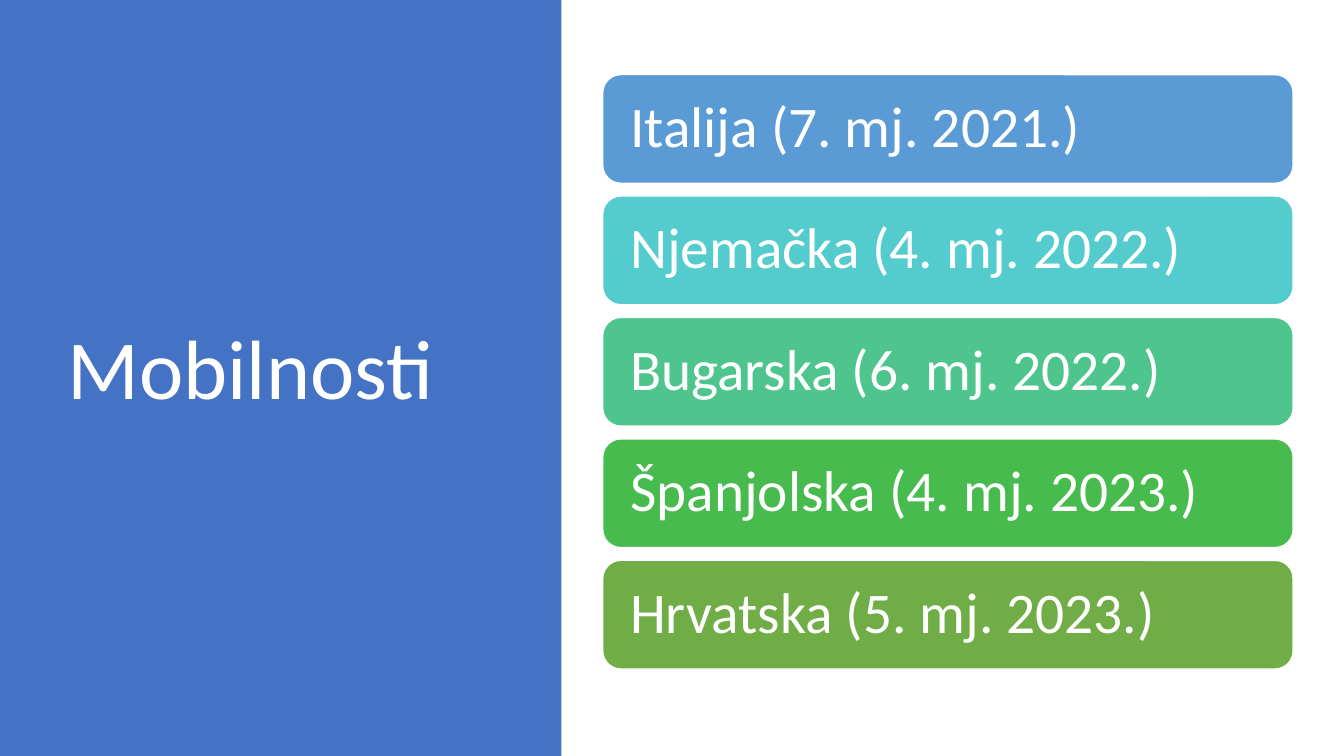
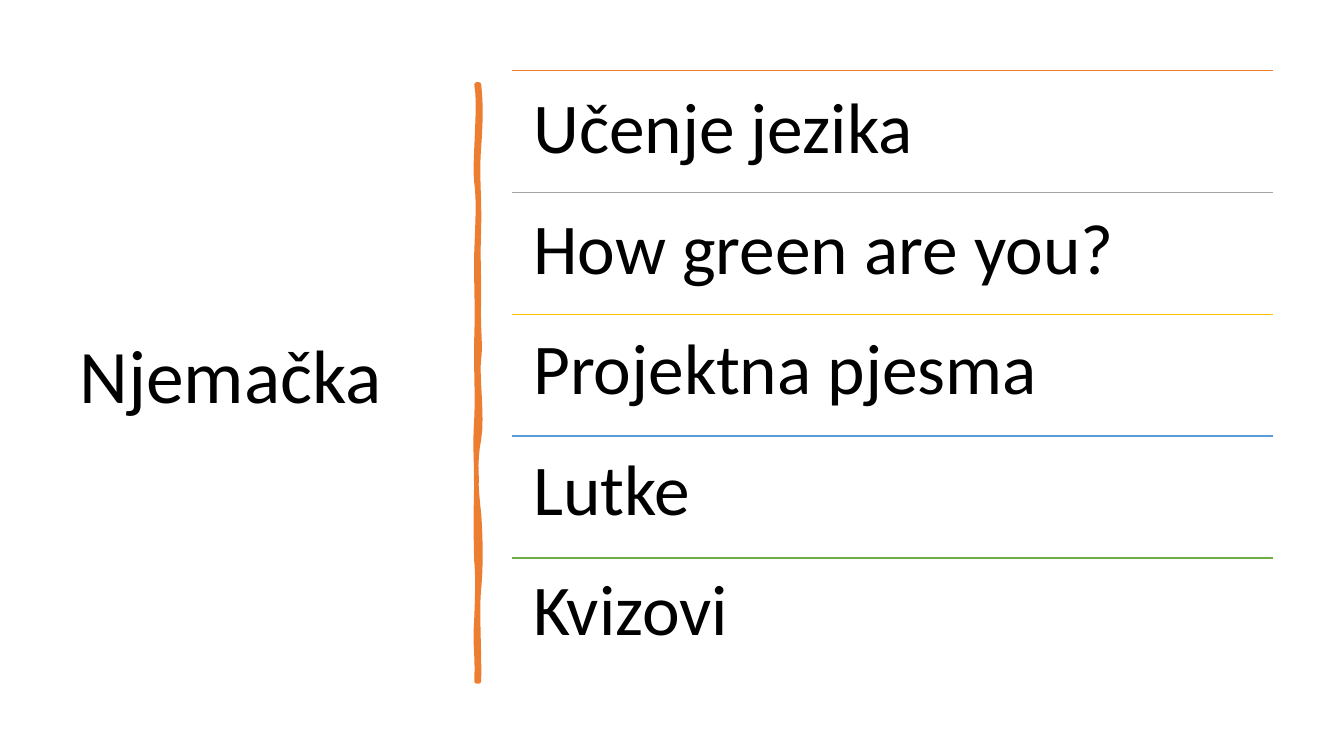
from dataclasses import dataclass

from lxml import etree
from pptx import Presentation
from pptx import util as u
from pptx.dml.color import RGBColor
from pptx.enum import shapes, text
from pptx.oxml.ns import qn

# Shared style
FONT = "Calibri"
WHITE = RGBColor(0xFF, 0xFF, 0xFF)
BLACK = RGBColor(0x00, 0x00, 0x00)
ROYAL = RGBColor(0x44, 0x72, 0xC4)
BLUE = RGBColor(0x5B, 0x9B, 0xD5)
TURQUOISE = RGBColor(0x54, 0xCC, 0xCD)
MINT = RGBColor(0x4D, 0xC5, 0x8D)
EMERALD = RGBColor(0x48, 0xBB, 0x4F)
GREEN = RGBColor(0x70, 0xAD, 0x47)
ORANGE = RGBColor(0xED, 0x7D, 0x31)
GREY = RGBColor(0xA5, 0xA5, 0xA5)
GOLD = RGBColor(0xFF, 0xC0, 0x00)


@dataclass(frozen=True)
class Item:
    label: str
    color: RGBColor


@dataclass(frozen=True)
class Box:
    """Position and size in centimetres."""
    left: float
    top: float
    width: float
    height: float

    def emu(self) -> tuple:
        return u.Cm(self.left), u.Cm(self.top), u.Cm(self.width), u.Cm(self.height)


@dataclass(frozen=True)
class Edge:
    """One side of the brush stroke; each wave is bend x, y, bend x, y, end y."""
    x: float
    start: float
    waves: tuple


MOBILITIES = (
    Item("Italija (7. mj. 2021.)", BLUE),
    Item("Njemačka (4. mj. 2022.)", TURQUOISE),
    Item("Bugarska (6. mj. 2022.)", MINT),
    Item("Španjolska (4. mj. 2023.)", EMERALD),
    Item("Hrvatska (5. mj. 2023.)", GREEN),
)
ACTIVITIES = (
    Item("Učenje jezika", ORANGE),
    Item("How green are you?", GREY),
    Item("Projektna pjesma", GOLD),
    Item("Lutke", BLUE),
    Item("Kvizovi", GREEN),
)
BAR = Box(15.19, 1.88, 17.4, 2.74)
BAR_PITCH = 3.06
ROW = Box(12.9, 1.78, 19.18, 3.07)

STROKE_EDGES = (
    Edge(12.07, 2.13, (
        (12.12, 2.59, 12.12, 3.02, 3.71),
        (12.01, 4.39, 12.09, 4.95, 5.74),
        (12.04, 6.53, 12.07, 6.65, 7.47),
        (12.04, 8.26, 12.12, 8.69, 9.04),
        (12.01, 9.4, 12.17, 10.52, 11.07),
        (11.96, 11.61, 11.99, 12.29, 12.95),
        (12.12, 13.61, 12.12, 14.33, 14.83),
        (12.01, 15.32, 12.09, 16.51, 17.17),
    )),
    Edge(12.01, 17.17, (
        (12.04, 16.41, 11.96, 16.36, 15.57),
        (12.04, 14.81, 12.04, 14.48, 14.15),
        (11.99, 13.82, 11.99, 12.57, 12.12),
        (12.01, 11.66, 11.96, 11.3, 10.54),
        (12.04, 9.8, 11.99, 9.47, 8.51),
        (12.04, 7.57, 11.99, 7.14, 6.35),
        (12.04, 5.54, 12.07, 5.08, 4.6),
        (11.94, 4.14, 12.12, 2.64, 2.13),
    )),
)


def write(tf, *lines: str, size: float, color: RGBColor, inset: float = 0.25,
          anchor=text.MSO_ANCHOR.MIDDLE, after: float = 0) -> None:
    """Fill a text frame with left-aligned paragraphs."""
    tf.word_wrap = True
    tf.auto_size = text.MSO_AUTO_SIZE.NONE
    tf.vertical_anchor = anchor
    tf.margin_left = tf.margin_right = u.Cm(inset)
    tf.margin_top = tf.margin_bottom = u.Cm(inset)
    for i, line in enumerate(lines):
        p = tf.add_paragraph() if i else tf.paragraphs[0]
        p.alignment = text.PP_ALIGN.LEFT
        p.line_spacing = 0.9
        p.space_before, p.space_after = u.Pt(0), u.Pt(after)
        r = p.add_run()
        r.text = line
        r.font.name, r.font.size = FONT, u.Pt(size)
        r.font.color.rgb = color


def place(sp, box: Box) -> None:
    sp.left, sp.top, sp.width, sp.height = box.emu()


def add_title(s, label: str, box: Box, *, size: float, color: RGBColor) -> None:
    place(s.shapes.title, box)
    write(s.shapes.title.text_frame, label, size=size, color=color)


def paint(sp, fill: RGBColor, line: RGBColor, width: float) -> None:
    sp.shadow.inherit = False
    sp.fill.solid()
    sp.fill.fore_color.rgb = fill
    sp.line.color.rgb = line
    sp.line.width = u.Pt(width)


def add_block(s, kind, box: Box, fill: RGBColor):
    sp = s.shapes.add_shape(kind, *box.emu())
    paint(sp, fill, WHITE, 1)
    return sp


def add_rule(s, left: float, top: float, width: float, color: RGBColor) -> None:
    y = u.Cm(top)
    line = s.shapes.add_connector(
        shapes.MSO_CONNECTOR.STRAIGHT, u.Cm(left), y, u.Cm(left + width), y)
    line.line.color.rgb = color
    line.line.width = u.Pt(1)
    etree.SubElement(line._element.spPr, qn("a:effectLst"))


def edge_points(edge: Edge, steps: int = 8) -> list[tuple[int, int]]:
    """Sample the cubic curves along one edge."""
    points, y0 = [(u.Cm(edge.x), u.Cm(edge.start))], edge.start
    for x1, y1, x2, y2, y3 in edge.waves:
        for i in range(1, steps + 1):
            t = i / steps
            a, b, c, d = (1 - t) ** 3, 3 * t * (1 - t) ** 2, 3 * t * t * (1 - t), t ** 3
            points.append((u.Cm((a + d) * edge.x + b * x1 + c * x2),
                           u.Cm(a * y0 + b * y1 + c * y2 + d * y3)))
        y0 = y3
    return points


def add_brush_stroke(s) -> None:
    points = [pt for edge in STROKE_EDGES for pt in edge_points(edge)]
    outline = s.shapes.build_freeform(*points[0])
    outline.add_line_segments(points[1:], close=True)
    sp = outline.convert_to_shape()
    paint(sp, ORANGE, ORANGE, 3.25)
    etree.SubElement(sp.line._get_or_add_ln(), qn("a:round"))


def add_plain_list(s, items: tuple[Item, ...], box: Box) -> None:
    """Body list without bullets, one line per ruled row."""
    body = s.placeholders[1]
    place(body, box)
    write(body.text_frame, *(item.label for item in items), size=51, color=BLACK,
          inset=0.54, anchor=text.MSO_ANCHOR.TOP, after=31)
    for p in body.text_frame.paragraphs:
        pPr = p._p.get_or_add_pPr()
        pPr.set("marL", "0")
        pPr.set("indent", "0")
        etree.SubElement(pPr, qn("a:buNone"))


def mobilities_slide(prs) -> None:
    s = prs.slides.add_slide(prs.slide_layouts[5])
    # Side panel behind the title
    panel = add_block(s, shapes.MSO_SHAPE.RECTANGLE, Box(0, 0, 14.15, 19.05), ROYAL)
    panel.line.fill.background()
    s.shapes.title._element.addprevious(panel._element)
    add_title(s, "Mobilnosti", Box(1.45, 1.73, 10.57, 15.29), size=60, color=WHITE)
    # Country bars
    for i, item in enumerate(MOBILITIES):
        box = Box(BAR.left, BAR.top + i * BAR_PITCH, BAR.width, BAR.height)
        sp = add_block(s, shapes.MSO_SHAPE.ROUNDED_RECTANGLE, box, item.color)
        write(sp.text_frame, item.label, size=41, color=WHITE, inset=0.56)


def germany_slide(prs) -> None:
    s = prs.slides.add_slide(prs.slide_layouts[1])
    add_title(s, "Njemačka", Box(1.75, 1.78, 9.5, 15.52), size=54, color=BLACK)
    add_brush_stroke(s)
    # Ruled activity list
    for i, item in enumerate(ACTIVITIES):
        add_rule(s, ROW.left, ROW.top + i * ROW.height, ROW.width, item.color)
    add_plain_list(s, ACTIVITIES, Box(ROW.left, ROW.top, ROW.width,
                                      ROW.height * len(ACTIVITIES)))


def main() -> None:
    prs = Presentation()
    prs.slide_width, prs.slide_height = u.Cm(33.87), u.Cm(19.05)
    mobilities_slide(prs)
    germany_slide(prs)
    prs.save("out.pptx")


if __name__ == "__main__":
    main()
